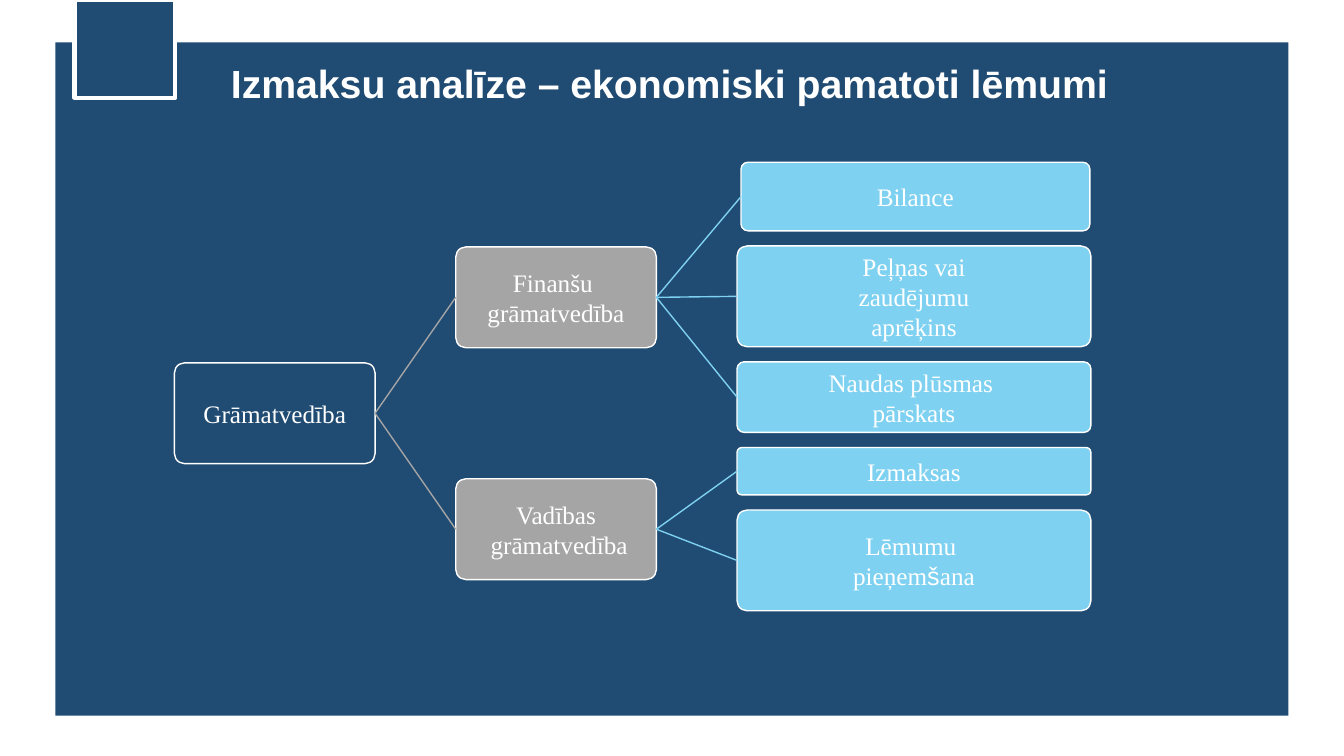
"""Build the accounting hierarchy slide."""
from pptx import Presentation
from pptx.dml.color import RGBColor
from pptx.enum import shapes, text
from pptx.oxml.ns import qn
from pptx.util import Inches, Pt
from lxml import etree

NAVY, GREY, SKY, WHITE = "204B72", "A5A5A5", "7ED1F0", "FFFFFF"
ROUNDED = shapes.MSO_SHAPE.ROUNDED_RECTANGLE
RIGHT_SITE, LEFT_SITE = 3, 1


def rgb(value):
    return RGBColor.from_string(value)


def add_block(s, kind, box, fill, line_width):
    sp = s.shapes.add_shape(kind, *[Inches(v) for v in box])
    sp.shadow.inherit = False
    sp.fill.solid()
    sp.fill.fore_color.rgb = rgb(fill)
    if line_width:
        sp.line.color.rgb = rgb(WHITE)
        sp.line.width = Pt(line_width)
    else:
        sp.line.fill.background()
    return sp


prs = Presentation()
prs.slide_width, prs.slide_height = Inches(13.33), Inches(7.5)
s = prs.slides.add_slide(prs.slide_layouts[5])

rect = shapes.MSO_SHAPE.RECTANGLE
add_block(s, rect, (0.55, 0.42, 12.23, 6.68), NAVY, 0)
add_block(s, rect, (0.74, 0, 1, 0.97), NAVY, 3)

title = s.shapes.title
title.left, title.top = Inches(2.19), Inches(0.54)
title.width, title.height = Inches(9.49), Inches(0.57)
s.shapes.element.append(title.element)
tf = title.text_frame
tf.text = "Izmaksu analīze – ekonomiski pamatoti lēmumi"
tf.vertical_anchor = text.MSO_ANCHOR.TOP
tf.auto_size = text.MSO_AUTO_SIZE.NONE
p = tf.paragraphs[0]
p.alignment = text.PP_ALIGN.LEFT
p.font.name, p.font.size, p.font.bold = "Arial", Pt(28), True
p.font.color.rgb = rgb(WHITE)

# Each node: key, parent key, box, fill, paragraphs
nodes = [
    ("root", None, (1.73, 3.6, 1.99, 1), NAVY, ["Grāmatvedība"]),
    ("financial", "root", (4.52, 2.45, 1.99, 1), GREY, ["Finanšu ", "grāmatvedība"]),
    ("balance", "financial", (7.35, 1.61, 3.46, 0.68), SKY, ["Bilance"]),
    ("profit", "financial", (7.31, 2.44, 3.51, 1), SKY,
     ["Peļņas vai", " zaudējumu ", "aprēķins"]),
    ("cash", "financial", (7.31, 3.59, 3.51, 0.7), SKY, ["Naudas plūsmas ", "pārskats"]),
    ("management", "root", (4.52, 4.75, 1.99, 1), GREY, ["Vadības", " grāmatvedība"]),
    ("costs", "management", (7.31, 4.44, 3.51, 0.47), SKY, ["Izmaksas"]),
    ("decisions", "management", (7.31, 5.06, 3.51, 1), SKY, ["Lēmumu ", "pieņemšana"]),
]
blocks = {}
for key, parent, box, fill, lines in nodes:
    sp = blocks[key] = add_block(s, ROUNDED, box, fill, 1)
    sp.adjustments[0] = 0.1
    tf = sp.text_frame
    tf.word_wrap = True
    tf.vertical_anchor = text.MSO_ANCHOR.MIDDLE
    tf.margin_left = tf.margin_right = tf.margin_top = tf.margin_bottom = Inches(0.01)
    tf.text = "\n".join(lines)
    for p in tf.paragraphs:
        p.alignment = text.PP_ALIGN.CENTER
        p.font.name, p.font.size = "Times New Roman", Pt(18)
        p.font.color.rgb = rgb(WHITE)
    if parent:
        link = s.shapes.add_connector(shapes.MSO_CONNECTOR.STRAIGHT, 0, 0, 0, 0)
        link.begin_connect(blocks[parent], RIGHT_SITE)
        link.end_connect(sp, LEFT_SITE)
        link.line.color.rgb = rgb(fill)
        link.line.width = Pt(1)
        etree.SubElement(link.element.spPr, qn("a:effectLst"))

p = blocks["decisions"].text_frame.paragraphs[1]
p.runs[0].text = "pieņem"
for part, font in (("š", "Arial"), ("ana", "Times New Roman")):
    r = p.add_run()
    r.text, r.font.name = part, font

prs.save("out.pptx")
